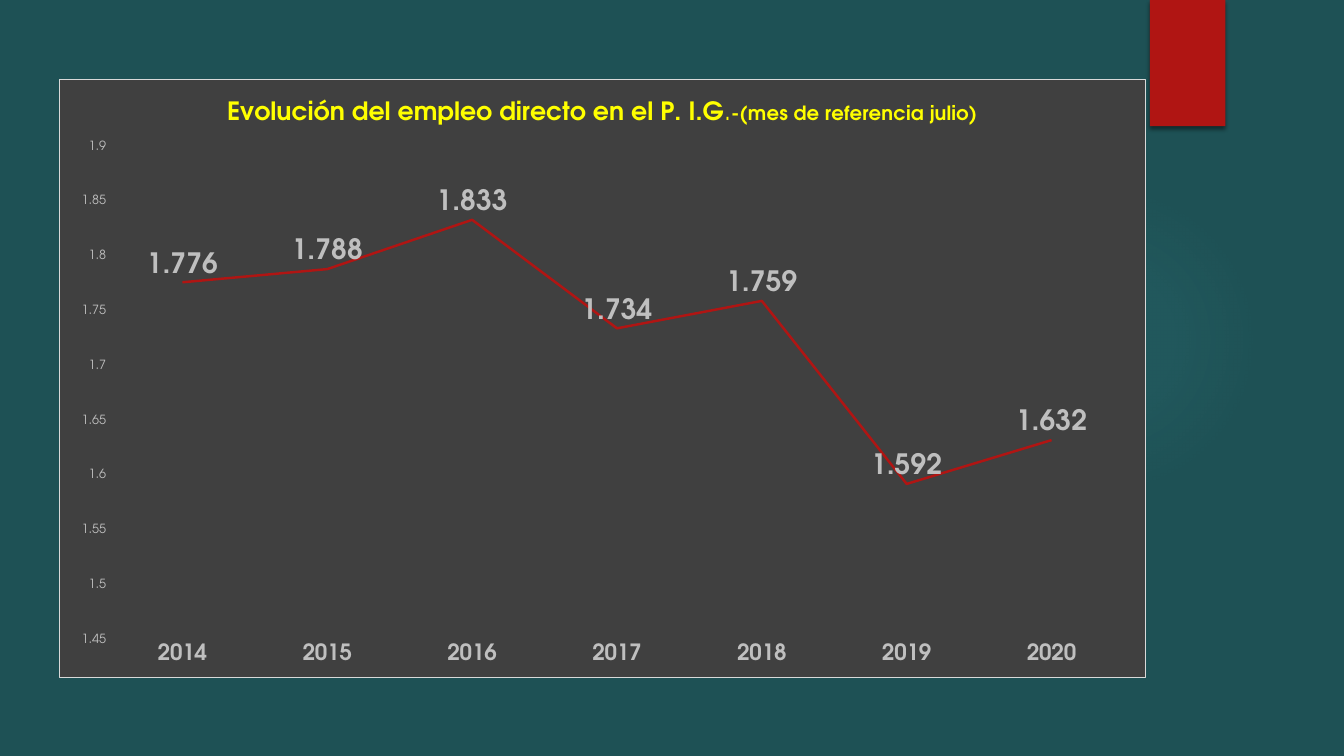
from lxml import etree
from pptx import Presentation
from pptx.chart.data import CategoryChartData
from pptx.dml.color import RGBColor
from pptx.enum.chart import XL_CHART_TYPE, XL_LABEL_POSITION, XL_TICK_MARK
from pptx.enum.shapes import MSO_SHAPE
from pptx.oxml import parse_xml
from pptx.oxml.ns import nsdecls, qn
from pptx.util import Cm, Pt

LINE_CHART = XL_CHART_TYPE.LINE
LABEL_ABOVE = XL_LABEL_POSITION.ABOVE
NO_TICK = XL_TICK_MARK.NONE
OVAL, RECTANGLE = MSO_SHAPE.OVAL, MSO_SHAPE.RECTANGLE
FONT = "TeX Gyre Adventor"
COLORS = {
    "background": "1E5155",
    "glow": "50B9C1",
    "red": "B01513",
    "panel": "404040",
    "border": "D9D9D9",
    "label": "BFBFBF",
    "title": "FFFF00",
    "white": "FFFFFF",
    "shadow": "000000",
}
EMPLOYMENT = {
    "2014": 1.776, "2015": 1.788, "2016": 1.833, "2017": 1.734,
    "2018": 1.759, "2019": 1.592, "2020": 1.632,
}
TITLE_RUNS = [
    ("Evolución del empleo directo en el P. I.G", 18, True),
    (".", 18, False),
    ("-(mes de referencia julio)", 14, True),
]


def color(name):
    """Return the named colour."""
    return RGBColor.from_string(COLORS[name])


def style_font(font, size, color_name, bold=False):
    """Set typeface, size, colour and weight of a font."""
    font.name = FONT
    font.size = Pt(size)
    font.bold = bold
    font.color.rgb = color(color_name)


def add_plain_shape(slide, kind, box):
    """Add a shape without line or theme shadow."""
    shape = slide.shapes.add_shape(kind, *box)
    shape.shadow.inherit = False
    shape.line.fill.background()
    return shape


def add_glow(slide, box):
    """Add the faint round light behind the chart."""
    shape = add_plain_shape(slide, OVAL, box)
    stops = "".join(
        f'<a:gs pos="{position * 1000}"><a:srgbClr val="{COLORS["glow"]}">'
        f'<a:alpha val="{alpha * 1000}"/></a:srgbClr></a:gs>'
        for position, alpha in ((0, 7), (36, 6), (69, 0))
    )
    gradient = parse_xml(
        f'<a:gradFill {nsdecls("a")} rotWithShape="1"><a:gsLst>{stops}</a:gsLst>'
        '<a:path path="circle"><a:fillToRect l="50000" t="50000" r="50000" b="50000"/>'
        "</a:path></a:gradFill>"
    )
    shape.element.spPr.find(qn("a:prstGeom")).addnext(gradient)


def add_ribbon(slide, box):
    """Add the red tab with its soft shadow."""
    shape = add_plain_shape(slide, RECTANGLE, box)
    shape.fill.solid()
    shape.fill.fore_color.rgb = color("red")
    effects = shape.element.spPr.find(qn("a:effectLst"))
    effects.append(parse_xml(
        f'<a:outerShdw {nsdecls("a")} blurRad="{Pt(3)}" dist="{Pt(2)}" dir="5400000" '
        f'rotWithShape="0"><a:srgbClr val="{COLORS["shadow"]}">'
        '<a:alpha val="45000"/></a:srgbClr></a:outerShdw>'
    ))


def style_panel(chart):
    """Fill and outline the chart area."""
    panel = parse_xml(
        f'<c:spPr {nsdecls("c", "a")}>'
        f'<a:solidFill><a:srgbClr val="{COLORS["panel"]}"/></a:solidFill>'
        f'<a:ln w="{Pt(0.75)}"><a:solidFill><a:srgbClr val="{COLORS["border"]}"/>'
        "</a:solidFill></a:ln></c:spPr>"
    )
    chart.element.find(qn("c:chart")).addnext(panel)


def place_plot(chart, box, plot_box):
    """Fix the inner plot area at a box measured from the chart corner."""
    plot_area = chart.element.find(qn("c:chart")).find(qn("c:plotArea"))
    for old_layout in plot_area.findall(qn("c:layout")):
        plot_area.remove(old_layout)
    layout = etree.Element(qn("c:layout"))
    manual = etree.SubElement(layout, qn("c:manualLayout"))
    settings = [("layoutTarget", "inner"), ("xMode", "edge"), ("yMode", "edge")]
    sizes = (box[2], box[3]) * 2
    settings += [
        (key, str(length / size)) for key, length, size in zip("xywh", plot_box, sizes)
    ]
    for tag, value in settings:
        etree.SubElement(manual, qn(f"c:{tag}"), val=value)
    plot_area.insert(0, layout)


def style_axis(axis, size, bold):
    """Show only the labels of an axis."""
    axis.has_major_gridlines = False
    axis.major_tick_mark = axis.minor_tick_mark = NO_TICK
    axis.format.line.fill.background()
    style_font(axis.tick_labels.font, size, "label", bold)


def add_employment_chart(slide, box):
    """Add the line chart of direct employment."""
    data = CategoryChartData(number_format="General")
    data.categories = list(EMPLOYMENT)
    data.add_series("Series 1", list(EMPLOYMENT.values()))
    chart = slide.shapes.add_chart(LINE_CHART, *box, data).chart
    style_font(chart.font, 10, "white")
    style_panel(chart)
    place_plot(chart, box, (Cm(1.28), Cm(1.7), Cm(25.58), Cm(12.45)))
    chart.has_legend = False

    chart.has_title = True
    chart.chart_title.include_in_layout = False
    paragraph = chart.chart_title.text_frame.paragraphs[0]
    for text, size, bold in TITLE_RUNS:
        run = paragraph.add_run()
        run.text = text
        style_font(run.font, size, "title", bold)

    style_axis(chart.category_axis, 16, True)
    value_axis = chart.value_axis
    style_axis(value_axis, 9, False)
    value_axis.minimum_scale = 1.45
    value_axis.maximum_scale = 1.9
    value_axis.major_unit = 0.05

    chart.plots[0].vary_by_categories = False
    series = chart.plots[0].series[0]
    series.smooth = False
    series.format.line.color.rgb = color("red")
    series.format.line.width = Pt(1.75)
    labels = series.data_labels
    labels.show_value = True
    labels.position = LABEL_ABOVE
    style_font(labels.font, 20, "label", True)


def main():
    """Build and save the presentation."""
    presentation = Presentation()
    presentation.slide_width = Cm(33.87)
    presentation.slide_height = Cm(19.05)
    slide = presentation.slides.add_slide(presentation.slide_layouts[6])
    slide.background.fill.solid()
    slide.background.fill.fore_color.rgb = color("background")
    add_glow(slide, (Cm(23.9), Cm(4.65), Cm(7.82), Cm(7.82)))
    add_ribbon(slide, (Cm(28.98), Cm(0), Cm(1.9), Cm(3.18)))
    add_employment_chart(slide, (Cm(1.48), Cm(1.98), Cm(27.41), Cm(15.11)))
    presentation.save("out.pptx")


if __name__ == "__main__":
    main()
